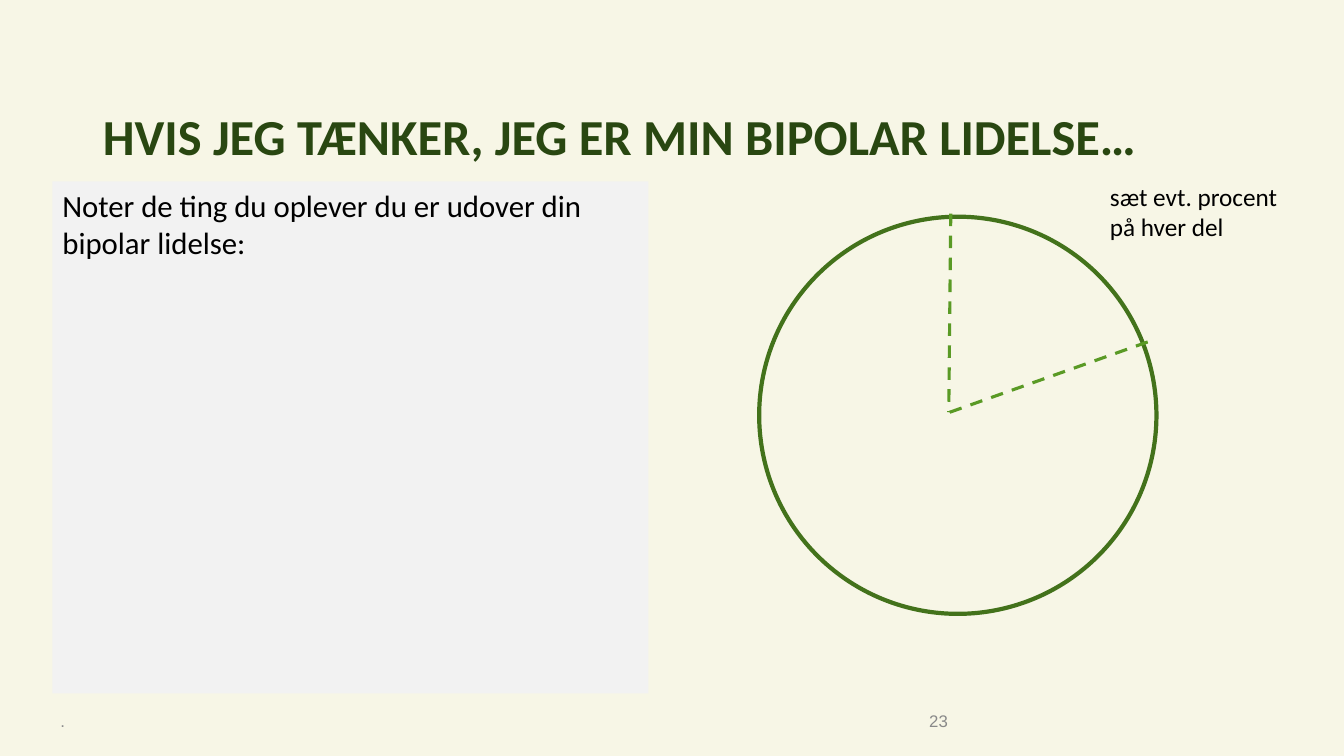
"""Build the slide about identity and bipolar disorder with a circle to divide into parts."""
from dataclasses import dataclass

from pptx import Presentation
from pptx.dml.color import RGBColor
from pptx.enum.dml import MSO_LINE
from pptx.enum.shapes import MSO_CONNECTOR, MSO_SHAPE
from pptx.enum.text import MSO_ANCHOR, MSO_AUTO_SIZE, PP_ALIGN
from pptx.oxml.ns import qn
from pptx.util import Inches, Pt


@dataclass(frozen=True)
class Theme:
    background: str = "F7F6E6"
    title: str = "294711"
    circle: str = "43721B"
    divider: str = "5A9A25"
    panel: str = "F2F2F2"
    text: str = "000000"
    number: str = "898989"
    footer: str = "8C8C8C"
    body_font: str = "Calibri"
    footer_font: str = "Arial"
    title_size: int = 36
    panel_size: int = 22
    hint_size: int = 18
    footer_size: int = 12


def rgb(color):
    return RGBColor.from_string(color)


def write(sp, text, font, size, color, anchor=MSO_ANCHOR.TOP, align=PP_ALIGN.LEFT):
    tf = sp.text_frame
    tf.text = text
    tf.word_wrap = True
    tf.auto_size = MSO_AUTO_SIZE.NONE
    tf.vertical_anchor = anchor
    p = tf.paragraphs[0]
    p.alignment = align
    r = p.runs[0]
    r.font.name = font
    r.font.size = Pt(size)
    r.font.color.rgb = rgb(color)
    return p


theme = Theme()
prs = Presentation()
prs.slide_width = Inches(13.33)
prs.slide_height = Inches(7.5)
s = prs.slides.add_slide(prs.slide_layouts[5])
s.background.fill.solid()
s.background.fill.fore_color.rgb = rgb(theme.background)

title = s.shapes.title
title.left, title.top = Inches(0.92), Inches(0.96)
title.width, title.height = Inches(11.5), Inches(0.84)
p = write(title, "HVIS JEG TÆNKER, JEG ER MIN BIPOLAR LIDELSE…",
          theme.body_font, theme.title_size, theme.title, MSO_ANCHOR.MIDDLE)
p.line_spacing = 0.9
p.runs[0].font.bold = True

circle = s.shapes.add_shape(MSO_SHAPE.OVAL, Inches(7.53), Inches(2.15), Inches(3.94), Inches(3.94))
circle.shadow.inherit = False
circle.fill.background()
circle.line.color.rgb = rgb(theme.circle)
circle.line.width = Pt(3)

for x1, y1, x2, y2 in [(9.43, 2.12, 9.41, 4.09), (9.42, 4.09, 11.39, 3.39)]:
    divider = s.shapes.add_connector(MSO_CONNECTOR.STRAIGHT, Inches(x1), Inches(y1), Inches(x2), Inches(y2))
    divider.line.color.rgb = rgb(theme.divider)
    divider.line.width = Pt(2.25)
    divider.line.dash_style = MSO_LINE.DASH
    divider._element.spPr.get_or_add_ln().addnext(
        divider._element.makeelement(qn("a:effectLst"), {}))

panel = s.shapes.add_shape(MSO_SHAPE.RECTANGLE, Inches(0.52), Inches(1.8), Inches(5.91), Inches(5.08))
panel.shadow.inherit = False
panel.fill.solid()
panel.fill.fore_color.rgb = rgb(theme.panel)
panel.line.fill.background()
write(panel, "Noter de ting du oplever du er udover din bipolar lidelse:",
      theme.body_font, theme.panel_size, theme.text)

number = s.shapes.add_textbox(Inches(7.17), Inches(6.95), Inches(2.33), Inches(0.4))
write(number, "23", theme.footer_font, theme.footer_size, theme.number,
      MSO_ANCHOR.MIDDLE, PP_ALIGN.RIGHT)

footer = s.shapes.add_textbox(Inches(0.5), Inches(6.95), Inches(2.33), Inches(0.4))
write(footer, ".", theme.footer_font, theme.footer_size, theme.footer, MSO_ANCHOR.MIDDLE)

hint = s.shapes.add_textbox(Inches(10.91), Inches(1.75), Inches(1.99), Inches(0.71))
write(hint, "sæt evt. procent på hver del", theme.body_font, theme.hint_size, theme.text)

prs.save("out.pptx")
